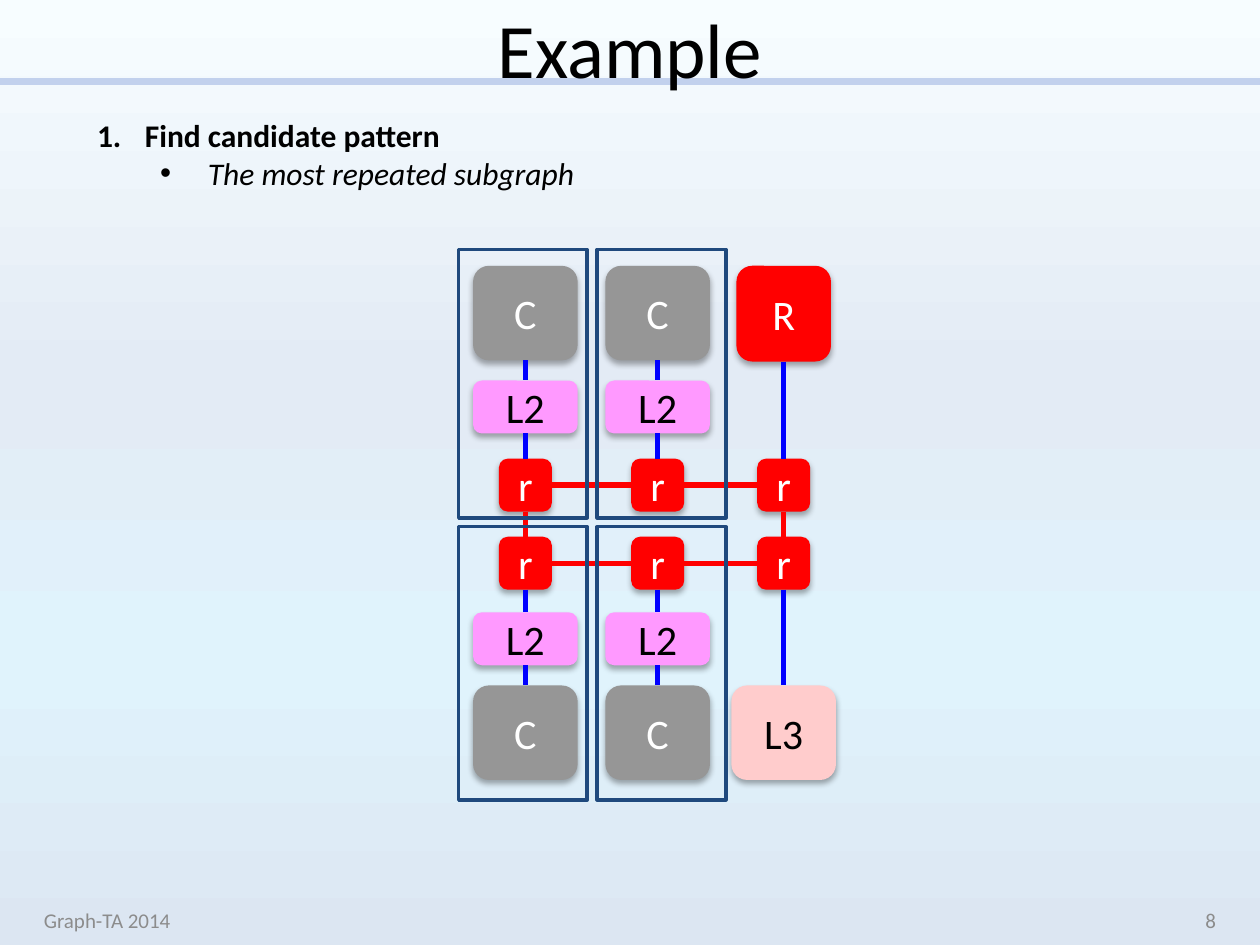
from dataclasses import dataclass

from pptx import Presentation
from pptx.dml.color import RGBColor
from pptx.enum.shapes import MSO_CONNECTOR, MSO_SHAPE
from pptx.enum.text import MSO_ANCHOR, MSO_AUTO_SIZE, PP_ALIGN
from pptx.oxml.ns import qn
from pptx.oxml.xmlchemy import OxmlElement
from pptx.util import Inches, Pt

LEFT, CENTER, RIGHT = PP_ALIGN.LEFT, PP_ALIGN.CENTER, PP_ALIGN.RIGHT
TOP, MIDDLE = MSO_ANCHOR.TOP, MSO_ANCHOR.MIDDLE
NO_AUTOFIT = MSO_AUTO_SIZE.NONE
ROUNDED, RECTANGLE = MSO_SHAPE.ROUNDED_RECTANGLE, MSO_SHAPE.RECTANGLE
STRAIGHT = MSO_CONNECTOR.STRAIGHT
SITE_TOP, SITE_LEFT, SITE_BOTTOM, SITE_RIGHT = range(4)


@dataclass(frozen=True)
class Theme:
    font: str = "Calibri"
    title_size: int = 44
    node_size: int = 24
    list_size: int = 18
    footer_size: int = 12
    dark: str = "000000"
    light: str = "FFFFFF"
    muted: str = "8C8C8C"
    rule: str = "C2D1ED"
    core: str = "969696"
    cache: str = "FF99FF"
    memory: str = "FFCCCC"
    router: str = "FF0000"
    local_link: str = "0000FF"
    candidate: str = "1F497D"
    background: tuple = ((0, "F7FDFF"), (40, "E3EBF5"), (70, "E0F3FC"), (100, "DCE6F2"))


THEME = Theme()

# kind: (label, width, height, fill, text colour)
NODE_KINDS = {
    "core": ("C", 0.83, 0.75, THEME.core, THEME.light),
    "cache": ("L2", 0.83, 0.42, THEME.cache, THEME.dark),
    "router": ("r", 0.42, 0.42, THEME.router, THEME.light),
    "root": ("R", 0.75, 0.76, THEME.router, THEME.light),
    "memory": ("L3", 0.83, 0.75, THEME.memory, THEME.dark),
}
# (kind, row) from top to bottom
TILE_COLUMN = [("core", 0), ("cache", 1), ("router", 2),
               ("router", 3), ("cache", 4), ("core", 5)]
EDGE_COLUMN = [("root", 0), ("router", 2), ("router", 3), ("memory", 5)]
# (centre, nodes, whether its two routers are linked)
COLUMNS = [(0.53, TILE_COLUMN, True), (1.58, TILE_COLUMN, False), (2.58, EDGE_COLUMN, True)]
ROW_TOPS = [0.13, 1.04, 1.66, 2.28, 2.88, 3.46]


def add_element(parent, tag, **attributes):
    element = OxmlElement(tag)
    for name, value in attributes.items():
        element.set(name, str(value))
    parent.append(element)
    return element


def write(paragraph, text, size, color=THEME.dark, align=LEFT, bold=False, italic=False):
    paragraph.alignment = align
    run = paragraph.add_run()
    run.text = text
    font = run.font
    font.name, font.size = THEME.font, Pt(size)
    font.bold, font.italic = bold, italic
    font.color.rgb = RGBColor.from_string(color)


def place(shape, left, top, width, height):
    shape.left, shape.top = Inches(left), Inches(top)
    shape.width, shape.height = Inches(width), Inches(height)


def paint_background(slide):
    fill = slide.background.fill
    fill.gradient()
    fill.gradient_angle = 270
    stops = slide.element.find(".//" + qn("a:gsLst"))
    for stop in list(stops):
        stops.remove(stop)
    for percent, color in THEME.background:
        stop = add_element(stops, "a:gs", pos=percent * 1000)
        add_element(stop, "a:srgbClr", val=color)


def add_line(slide, color, width, start=(0, 0), end=(0, 0)):
    line = slide.shapes.add_connector(STRAIGHT, *map(Inches, start + end))
    line.line.color.rgb = RGBColor.from_string(color)
    line.line.width = Pt(width)
    add_element(line._element.spPr, "a:effectLst")
    return line


def add_header(slide, left, top, width, height):
    rule = add_line(slide, THEME.rule, 4, (0.0, top + 0.65), (10.0, top + 0.65))
    # The rule runs behind the title.
    rule._element.getparent().insert(2, rule._element)
    title = slide.shapes.title
    place(title, left, top, width, height)
    frame = title.text_frame
    frame.vertical_anchor, frame.auto_size = MIDDLE, NO_AUTOFIT
    write(frame.paragraphs[0], "Example", THEME.title_size, align=CENTER)


def add_steps(slide, left, top, width, height):
    body = slide.placeholders[1]
    place(body, left, top, width, height)
    frame = body.text_frame
    frame.vertical_anchor, frame.auto_size = TOP, NO_AUTOFIT
    step, detail = frame.paragraphs[0], frame.add_paragraph()
    detail.level = 1
    write(step, "Find candidate pattern", THEME.list_size, bold=True)
    write(detail, "The most repeated subgraph", THEME.list_size, italic=True)
    for paragraph, margin in ((step, 0.38), (detail, 0.88)):
        paragraph.space_before = Pt(0)
        properties = paragraph._p.get_or_add_pPr()
        properties.set("marL", str(Inches(margin)))
        properties.set("indent", str(Inches(-0.38)))
        if paragraph is step:
            add_element(properties, "a:buFont", typeface="+mj-lt")
            add_element(properties, "a:buAutoNum", type="arabicPeriod")
        else:
            add_element(properties, "a:buFont", typeface="Arial")
            add_element(properties, "a:buChar", char="•")


def add_footer(slide, left, top, width, height):
    part_width = 2.33
    for text, part_left, align in (("Graph-TA 2014", left, LEFT),
                                   ("8", left + width - part_width, RIGHT)):
        footer = slide.shapes.add_textbox(0, 0, 0, 0)
        place(footer, part_left, top, part_width, height)
        frame = footer.text_frame
        frame.word_wrap, frame.vertical_anchor = True, MIDDLE
        write(frame.paragraphs[0], text, THEME.footer_size, THEME.muted, align)


def add_node(slide, kind, center, top):
    label, width, height, fill, color = NODE_KINDS[kind]
    node = slide.shapes.add_shape(ROUNDED, 0, 0, 0, 0)
    place(node, center - width / 2, top, width, height)
    node.fill.solid()
    node.fill.fore_color.rgb = RGBColor.from_string(fill)
    node.line.fill.background()
    node.shadow.inherit = False
    effects = node._element.spPr.find(qn("a:effectLst"))
    shadow = add_element(effects, "a:outerShdw", blurRad=Pt(3.5), dist=Pt(2.2),
                         dir=90 * 60000, rotWithShape=0)
    add_element(add_element(shadow, "a:srgbClr", val=THEME.dark), "a:alpha", val=32000)
    node.text_frame.vertical_anchor = MIDDLE
    write(node.text_frame.paragraphs[0], label, THEME.node_size, color, CENTER)
    return node


def link(slide, start, start_site, end, end_site, color):
    line = add_line(slide, color, 3)
    line.begin_connect(start, start_site)
    line.end_connect(end, end_site)


def add_network(slide, left, top):
    """Draw the linked nodes and frame each repeated subgraph."""
    router_rows = {2: [], 3: []}
    for center, column, routers_linked in COLUMNS:
        nodes = [add_node(slide, kind, left + center, top + ROW_TOPS[row])
                 for kind, row in column]
        for index, (kind, row) in enumerate(column):
            if kind == "router":
                router_rows[row].append(nodes[index])
            if index == 0:
                continue
            between_routers = kind == column[index - 1][0] == "router"
            if routers_linked or not between_routers:
                color = THEME.router if between_routers else THEME.local_link
                link(slide, nodes[index - 1], SITE_BOTTOM, nodes[index], SITE_TOP, color)
    for routers in router_rows.values():
        for start, end in zip(routers, routers[1:]):
            link(slide, start, SITE_RIGHT, end, SITE_LEFT, THEME.router)
    for row_top, height in ((0, 2.13), (2.2, 2.17)):
        for column_left in (0, 1.1):
            candidate = slide.shapes.add_shape(RECTANGLE, 0, 0, 0, 0)
            place(candidate, left + column_left, top + row_top, 1.02, height)
            candidate.fill.background()
            candidate.line.color.rgb = RGBColor.from_string(THEME.candidate)
            candidate.line.width = Pt(2)
            candidate.shadow.inherit = False


def main():
    deck = Presentation()
    deck.slide_width, deck.slide_height = Inches(10), Inches(7.5)
    slide = deck.slides.add_slide(deck.slide_layouts[1])
    paint_background(slide)
    add_header(slide, 0.5, 0, 9, 0.75)
    add_steps(slide, 0.67, 0.87, 8.43, 1.92)
    add_footer(slide, 0.25, 7.1, 9.5, 0.4)
    add_network(slide, 3.64, 1.98)
    deck.save("out.pptx")


if __name__ == "__main__":
    main()
